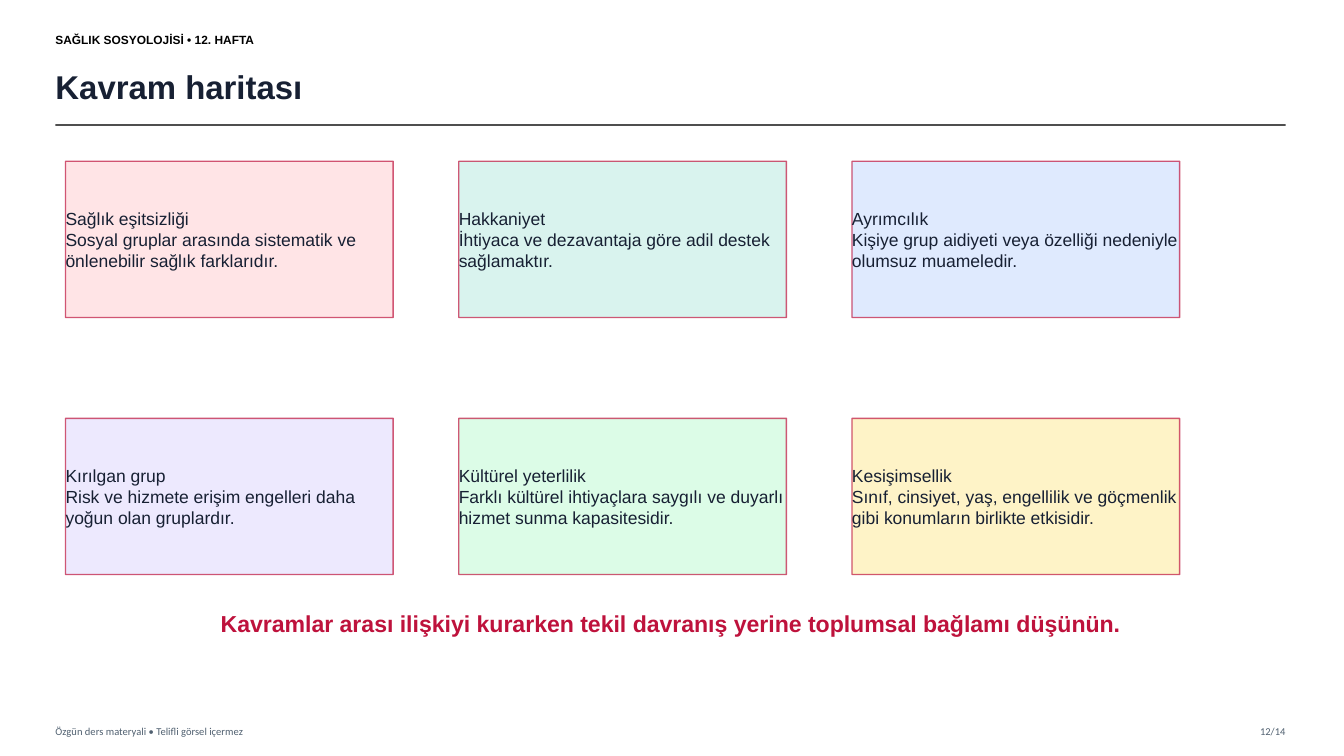
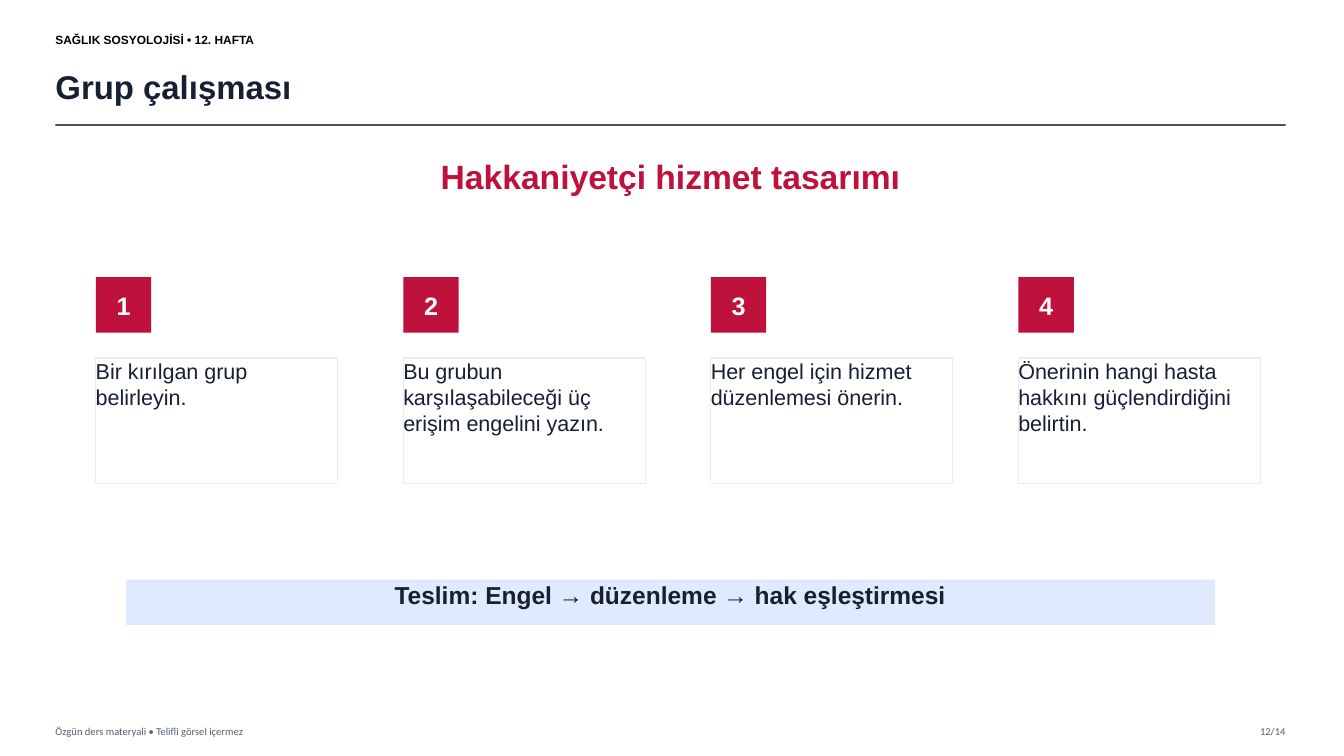
from lxml.etree import SubElement as Sub
from pptx import Presentation
from pptx.dml.color import RGBColor as Rgb
from pptx.enum.shapes import MSO_CONNECTOR as Link, MSO_SHAPE as Form
from pptx.enum.text import MSO_ANCHOR as Anchor, PP_ALIGN as Align
from pptx.oxml.ns import qn
from pptx.util import Pt

PX = 9144  # EMU per px, 100 px to the inch
WIDE, HIGH = 1333, 750

HUES = {
    "ink": "172033", "black": "000000", "white": "FFFFFF", "rule": "333333",
    "gray": "506070", "red": "BE123C", "edge": "E8EEF5", "rose": "FFE4E6",
    "teal": "D9F3EE", "blue": "DFEAFE", "lilac": "EDE9FE", "mint": "DCFCE7",
    "sand": "FEF3C7",
}

CARDS = [
    ("rose", "Sağlık eşitsizliği",
     "Sosyal gruplar arasında sistematik ve önlenebilir sağlık farklarıdır."),
    ("teal", "Hakkaniyet",
     "İhtiyaca ve dezavantaja göre adil destek sağlamaktır."),
    ("blue", "Ayrımcılık",
     "Kişiye grup aidiyeti veya özelliği nedeniyle olumsuz muameledir."),
    ("lilac", "Kırılgan grup",
     "Risk ve hizmete erişim engelleri daha yoğun olan gruplardır."),
    ("mint", "Kültürel yeterlilik",
     "Farklı kültürel ihtiyaçlara saygılı ve duyarlı hizmet sunma kapasitesidir."),
    ("sand", "Kesişimsellik",
     "Sınıf, cinsiyet, yaş, engellilik ve göçmenlik gibi konumların birlikte etkisidir."),
]

STEPS = [
    "Bir kırılgan grup belirleyin.",
    "Bu grubun karşılaşabileceği üç erişim engelini yazın.",
    "Her engel için hizmet düzenlemesi önerin.",
    "Önerinin hangi hasta hakkını güçlendirdiğini belirtin.",
]


def emu(*sizes):
    return [size * PX for size in sizes]


def tint(hue):
    return Rgb.from_string(HUES[hue])


def stroke(line, hue, width, solid=100):
    """Colour a line; solid is its opacity in percent."""
    line.color.rgb = tint(hue)
    line.width = Pt(width)
    if solid < 100:
        color = line.fill._xPr.find(".//" + qn("a:srgbClr"))
        Sub(color, qn("a:alpha"), val=str(solid * 1000))


def write(shape, lines, size, hue="ink", bold=False, align=Align.LEFT,
          anchor=Anchor.MIDDLE, face="Arial"):
    frame = shape.text_frame
    frame.margin_left = frame.margin_right = 0
    frame.margin_top = frame.margin_bottom = 0
    frame.word_wrap = True
    frame.vertical_anchor = anchor
    frame.text = "\n".join(lines)
    for para in frame.paragraphs:
        para.alignment = align
        font = para.font
        font.name, font.size, font.bold = face, Pt(size), bold
        font.color.rgb = tint(hue)


def label(slide, box, text, size, **style):
    write(slide.shapes.add_textbox(*emu(*box)), [text], size, **style)


def block(slide, box, fill):
    shape = slide.shapes.add_shape(Form.RECTANGLE, *emu(*box))
    shape.shadow.inherit = False
    shape.fill.solid()
    shape.fill.fore_color.rgb = tint(fill)
    shape.line.fill.background()
    return shape


def head(slide, box, title):
    """Course name, slide title and the rule below them."""
    x, y, w, h = box
    label(slide, (x, y, 360, 28), "SAĞLIK SOSYOLOJİSİ • 12. HAFTA", 8.5,
          hue="black", bold=True)
    label(slide, (x, y + 33, w - 25, 55), title, 23.5, bold=True)
    rule = slide.shapes.add_connector(
        Link.STRAIGHT, *emu(x, y + h, x + w, y + h))
    stroke(rule.line, "rule", 1.2, 85)
    Sub(rule._element.spPr, qn("a:effectLst"))


def foot(slide, box):
    x, y, w, h = box
    style = dict(hue="gray", face="Calibri")
    label(slide, (x, y, 600, h),
          "Özgün ders materyali • Telifli görsel içermez", 7.5, **style)
    label(slide, (x + w - 65, y, 65, h), "12/14", 7.5,
          align=Align.RIGHT, **style)


def cards(slide, box, cols=3, gap_x=65, gap_y=100):
    """Grid of tinted concept cards."""
    x, y, w, h = box
    rows = len(CARDS) // cols
    wide = (w - gap_x * (cols - 1)) // cols
    high = (h - gap_y * (rows - 1)) // rows
    for i, (fill, term, sense) in enumerate(CARDS):
        row, col = divmod(i, cols)
        spot = (x + col * (wide + gap_x), y + row * (high + gap_y), wide, high)
        card = block(slide, spot, fill)
        stroke(card.line, "red", 1, 70)
        write(card, [term, sense], 12.5)


def steps(slide, box, gap=65, side=55, drop=80):
    """Row of numbered tasks: a badge above each text frame."""
    x, y, w, h = box
    wide = (w - gap * (len(STEPS) - 1)) // len(STEPS)
    for i, task in enumerate(STEPS):
        left = x + i * (wide + gap)
        badge = block(slide, (left, y, side, side), "red")
        write(badge, [str(i + 1)], 18, "white", True, Align.CENTER)
        panel = block(slide, (left, y + drop, wide, h - drop), "white")
        stroke(panel.line, "edge", 1)
        write(panel, [task], 15.4, anchor=Anchor.TOP)


def base(deck, title):
    """Blank slide with the shared header and footer."""
    slide = deck.slides.add_slide(deck.slide_layouts[6])
    head(slide, (55, 25, 1220, 99), title)
    foot(slide, (55, 714, 1220, 22))
    return slide


def main():
    deck = Presentation()
    deck.slide_width, deck.slide_height = emu(WIDE, HIGH)
    mid = dict(bold=True, align=Align.CENTER, anchor=Anchor.TOP)

    # Concept map
    slide = base(deck, "Kavram haritası")
    cards(slide, (65, 160, 1105, 410))
    label(slide, (100, 605, 1130, 45),
          "Kavramlar arası ilişkiyi kurarken tekil davranış yerine "
          "toplumsal bağlamı düşünün.", 16.5, hue="red", **mid)

    # Group work
    slide = base(deck, "Grup çalışması")
    label(slide, (75, 155, 1180, 65), "Hakkaniyetçi hizmet tasarımı", 24,
          hue="red", **mid)
    steps(slide, (95, 275, 1155, 205))
    band = block(slide, (125, 575, 1080, 45), "blue")
    write(band, ["Teslim: Engel → düzenleme → hak eşleştirmesi"], 17.5, **mid)

    deck.save("out.pptx")


if __name__ == "__main__":
    main()
